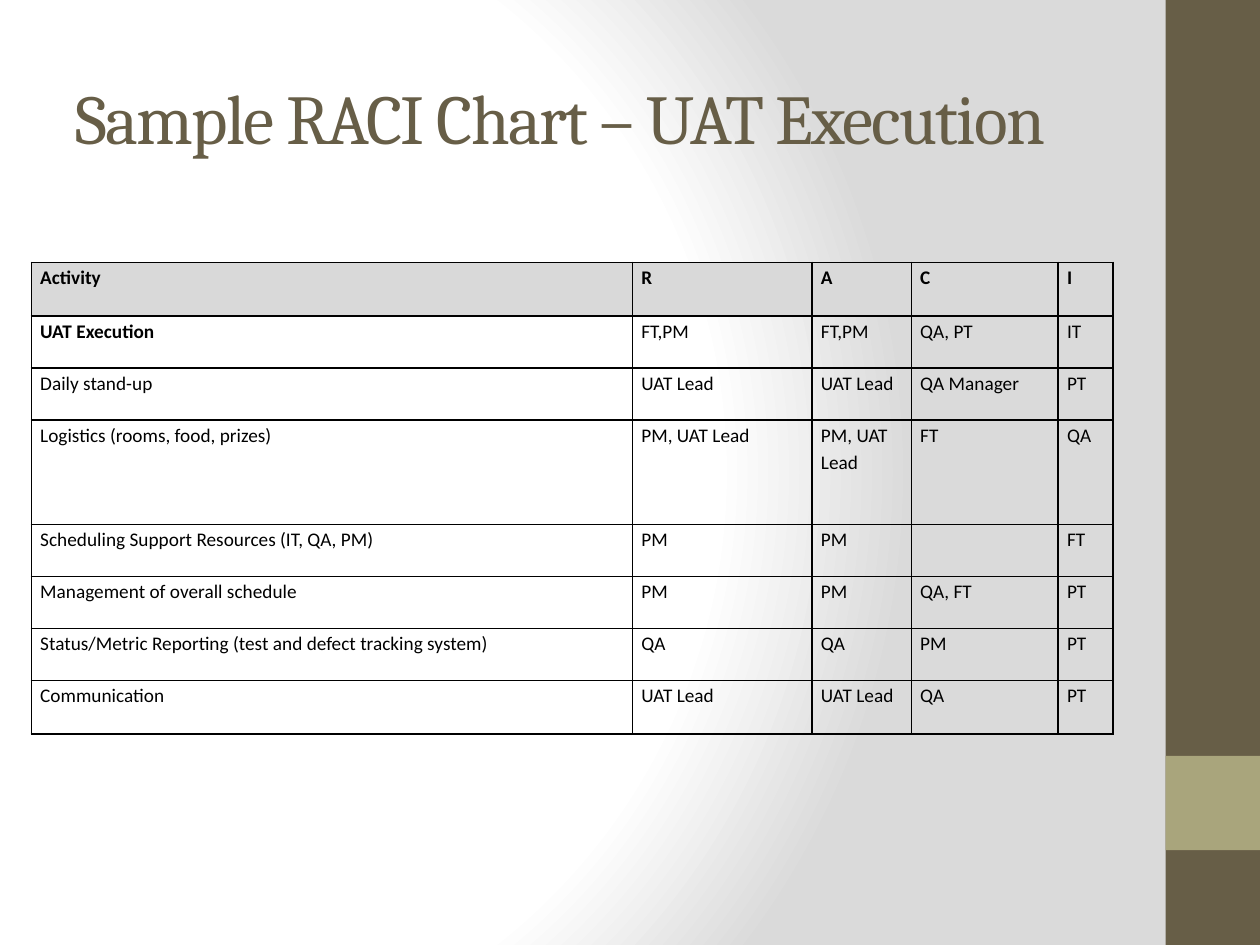
from pptx import Presentation
from pptx.dml.color import RGBColor
from pptx.enum.shapes import MSO_SHAPE
from pptx.enum.text import MSO_ANCHOR, MSO_AUTO_SIZE, PP_ALIGN
from pptx.oxml import parse_xml
from pptx.oxml.ns import nsdecls
from pptx.util import Cm, Pt

RECT = MSO_SHAPE.RECTANGLE
MIDDLE = MSO_ANCHOR.MIDDLE
NO_AUTOFIT = MSO_AUTO_SIZE.NONE
LEFT = PP_ALIGN.LEFT

WHITE = RGBColor(0xFF, 0xFF, 0xFF)
BLACK = RGBColor(0x00, 0x00, 0x00)
MIST = RGBColor(0xDA, 0xDA, 0xDA)
HEADER_GRAY = RGBColor(0xD9, 0xD9, 0xD9)
BROWN = RGBColor(0x67, 0x5E, 0x47)
OLIVE = RGBColor(0xA9, 0xA5, 0x7C)

COL_WIDTHS = [12.12, 3.62, 2, 2.96, 1.11]
ROW_HEIGHTS = [1.08, 1.05, 1.05, 2.1, 1.05, 1.05, 1.05, 1.08]
ROWS = [
    ["Activity", "R", "A", "C", "I"],
    ["UAT Execution", "FT,PM", "FT,PM", "QA, PT", "IT"],
    ["Daily stand-up", "UAT Lead", "UAT Lead", "QA Manager", "PT"],
    ["Logistics (rooms, food, prizes)", "PM, UAT Lead", "PM, UAT Lead", "FT", "QA"],
    ["Scheduling Support Resources (IT, QA, PM)", "PM", "PM", "", "FT"],
    ["Management of overall schedule", "PM", "PM", "QA, FT", "PT"],
    ["Status/Metric Reporting (test and defect tracking system)", "QA", "QA", "PM", "PT"],
    ["Communication", "UAT Lead", "UAT Lead", "QA", "PT"],
]


def set_background(s):
    stops = "".join(
        f'<a:gs pos="{pos * 1000}"><a:srgbClr val="{color}"/></a:gs>'
        for pos, color in [(0, WHITE), (75, WHITE), (100, MIST)]
    )
    bg = parse_xml(
        f'<p:bg {nsdecls("p", "a")}><p:bgPr><a:gradFill rotWithShape="1">'
        f'<a:gsLst>{stops}</a:gsLst><a:path path="circle">'
        '<a:fillToRect l="20000" t="50000" r="100000" b="50000"/></a:path>'
        '</a:gradFill><a:effectLst/></p:bgPr></p:bg>'
    )
    s.element.cSld.insert(0, bg)


def add_band(s, top, height, color):
    sp = s.shapes.add_shape(RECT, Cm(23.5), Cm(top), Cm(1.9), Cm(height))
    sp.shadow.inherit = False
    sp.fill.solid()
    sp.fill.fore_color.rgb = color
    sp.line.fill.background()


def add_run(p, text, font, size, color, bold=False):
    r = p.add_run()
    r.text = text
    r.font.name = font
    r.font.size = Pt(size)
    r.font.color.rgb = color
    r.font.bold = bold
    return r


def set_title(s, text):
    sp = s.shapes.title
    sp.left, sp.top, sp.width, sp.height = Cm(1.27), Cm(0.76), Cm(21.16), Cm(3.18)
    tf = sp.text_frame
    tf.auto_size = NO_AUTOFIT
    tf.vertical_anchor = MIDDLE
    p = tf.paragraphs[0]
    p.alignment = LEFT
    r = add_run(p, text, "Cambria", 40, BROWN)
    r.font._element.set("spc", "-100")


def set_borders(cell):
    tc_pr = cell._tc.get_or_add_tcPr()
    for side in "LRTB":
        tc_pr.append(parse_xml(
            f'<a:ln{side} {nsdecls("a")} w="12700"><a:solidFill>'
            f'<a:srgbClr val="{BLACK}"/></a:solidFill></a:ln{side}>'
        ))


def fill_cell(cell, text, header, bold):
    cell.margin_left = cell.margin_right = Cm(0.18)
    cell.margin_top = cell.margin_bottom = 0
    set_borders(cell)
    if header:
        cell.fill.solid()
        cell.fill.fore_color.rgb = HEADER_GRAY
    else:
        cell.fill.background()
    if text:
        p = cell.text_frame.paragraphs[0]
        p.line_spacing = 1.15
        add_run(p, text, "Calibri", 11, BLACK, bold)


def add_raci_table(s):
    table = s.shapes.add_table(
        len(ROWS), len(COL_WIDTHS), Cm(0.63), Cm(5.29),
        Cm(sum(COL_WIDTHS)), Cm(sum(ROW_HEIGHTS)),
    ).table
    for column, width in zip(table.columns, COL_WIDTHS):
        column.width = Cm(width)
    for i, (row, height) in enumerate(zip(table.rows, ROW_HEIGHTS)):
        row.height = Cm(height)
        for j, text in enumerate(ROWS[i]):
            fill_cell(table.cell(i, j), text, i == 0, i == 0 or (i, j) == (1, 0))


def main():
    prs = Presentation()
    prs.slide_width, prs.slide_height = Cm(25.4), Cm(19.05)
    s = prs.slides.add_slide(prs.slide_layouts[5])
    set_background(s)
    add_band(s, 0, 19.05, BROWN)
    add_band(s, 15.24, 1.9, OLIVE)
    set_title(s, "Sample RACI Chart – UAT Execution")
    add_raci_table(s)
    prs.save("out.pptx")


if __name__ == "__main__":
    main()
